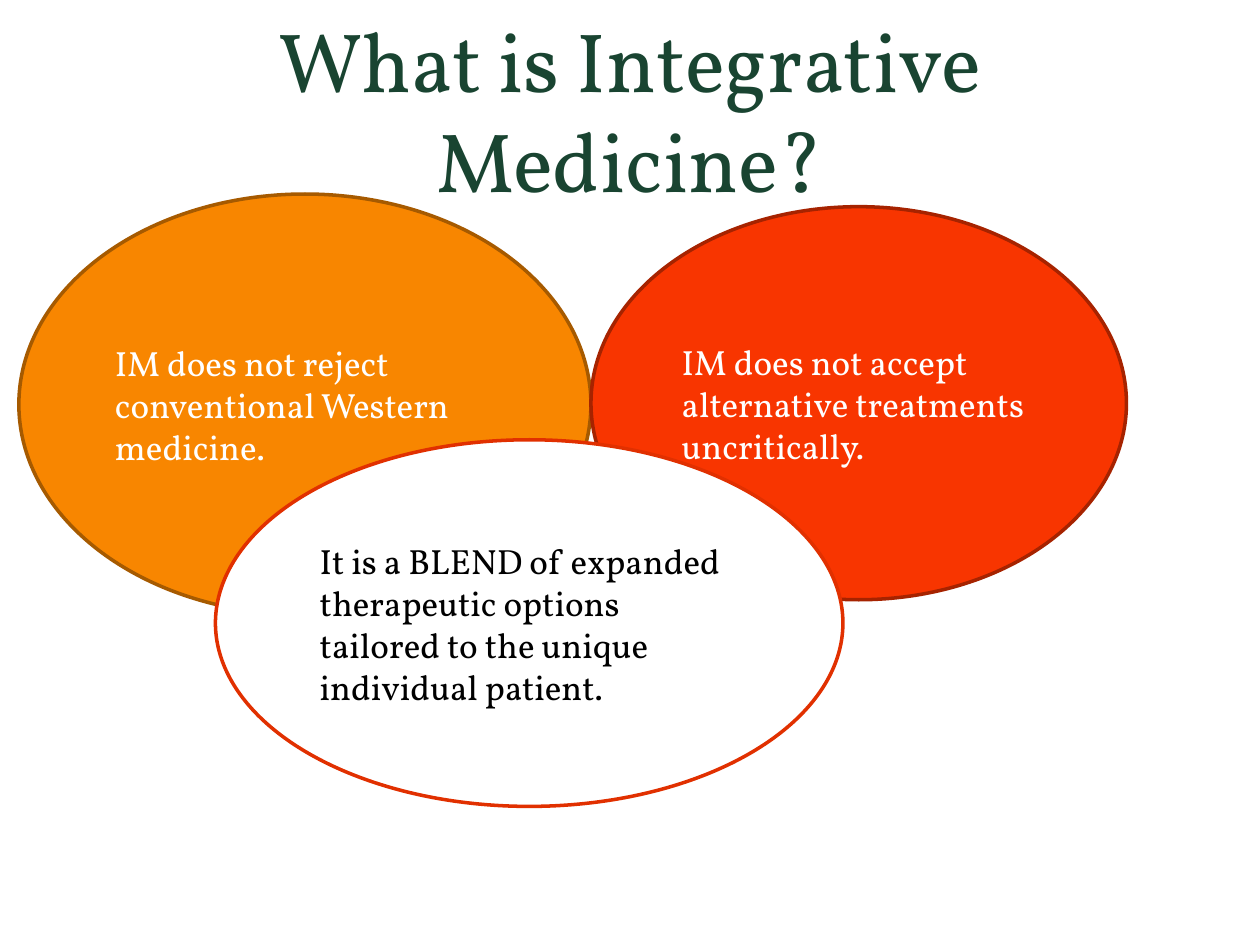
from dataclasses import dataclass

import pptx
import pptx.dml.color
import pptx.enum.shapes
import pptx.enum.text
import pptx.util
from pptx.util import Inches

FONT = "Vollkorn"
COLORS = {
    "title": "194431",
    "white": "FFFFFF",
    "black": "000000",
    "orange": "F88600",
    "orange_edge": "A65A00",
    "red": "F83500",
    "red_edge": "A62300",
    "blend_edge": "E13000",
}


@dataclass
class Oval:
    text: str
    left: float
    top: float
    width: float
    height: float
    fill: str
    edge: str
    text_color: str


OVALS = [
    Oval("IM does not reject conventional Western medicine.",
         0.15, 1.54, 4.54, 3.34, "orange", "orange_edge", "white"),
    Oval("IM does not accept alternative treatments uncritically.",
         4.69, 1.64, 4.25, 3.12, "red", "red_edge", "white"),
    Oval("It is a BLEND of expanded therapeutic options tailored to the "
         "unique individual patient.",
         1.71, 3.49, 4.98, 2.91, "white", "blend_edge", "black"),
]


def color(name: str) -> pptx.dml.color.RGBColor:
    return pptx.dml.color.RGBColor.from_string(COLORS[name])


def write_text(shape, text: str, size: int, color_name: str,
               alignment: pptx.enum.text.PP_ALIGN) -> None:
    text_frame = shape.text_frame
    text_frame.text = text
    text_frame.word_wrap = True
    text_frame.auto_size = pptx.enum.text.MSO_AUTO_SIZE.NONE
    text_frame.vertical_anchor = pptx.enum.text.MSO_ANCHOR.MIDDLE
    paragraph = text_frame.paragraphs[0]
    paragraph.alignment = alignment
    font = paragraph.runs[0].font
    font.name = FONT
    font.size = pptx.util.Pt(size)
    font.color.rgb = color(color_name)


def draw_oval(slide, oval: Oval) -> None:
    shape = slide.shapes.add_shape(
        pptx.enum.shapes.MSO_SHAPE.OVAL, Inches(oval.left), Inches(oval.top),
        Inches(oval.width), Inches(oval.height))
    shape.shadow.inherit = False
    shape.fill.solid()
    shape.fill.fore_color.rgb = color(oval.fill)
    shape.line.color.rgb = color(oval.edge)
    shape.line.width = pptx.util.Pt(2)
    write_text(shape, oval.text, 20, oval.text_color,
               pptx.enum.text.PP_ALIGN.LEFT)


def main() -> None:
    presentation = pptx.Presentation()
    presentation.slide_width = Inches(10)
    presentation.slide_height = Inches(7.5)
    slide = presentation.slides.add_slide(presentation.slide_layouts[5])

    # Title
    title = slide.shapes.title
    title.left, title.top = Inches(0.84), Inches(0.09)
    title.width, title.height = Inches(8.32), Inches(1.55)
    write_text(title, "What is Integrative Medicine?", 48, "title",
               pptx.enum.text.PP_ALIGN.CENTER)

    # Overlapping ovals, back to front
    for oval in OVALS:
        draw_oval(slide, oval)

    presentation.save("out.pptx")


if __name__ == "__main__":
    main()
